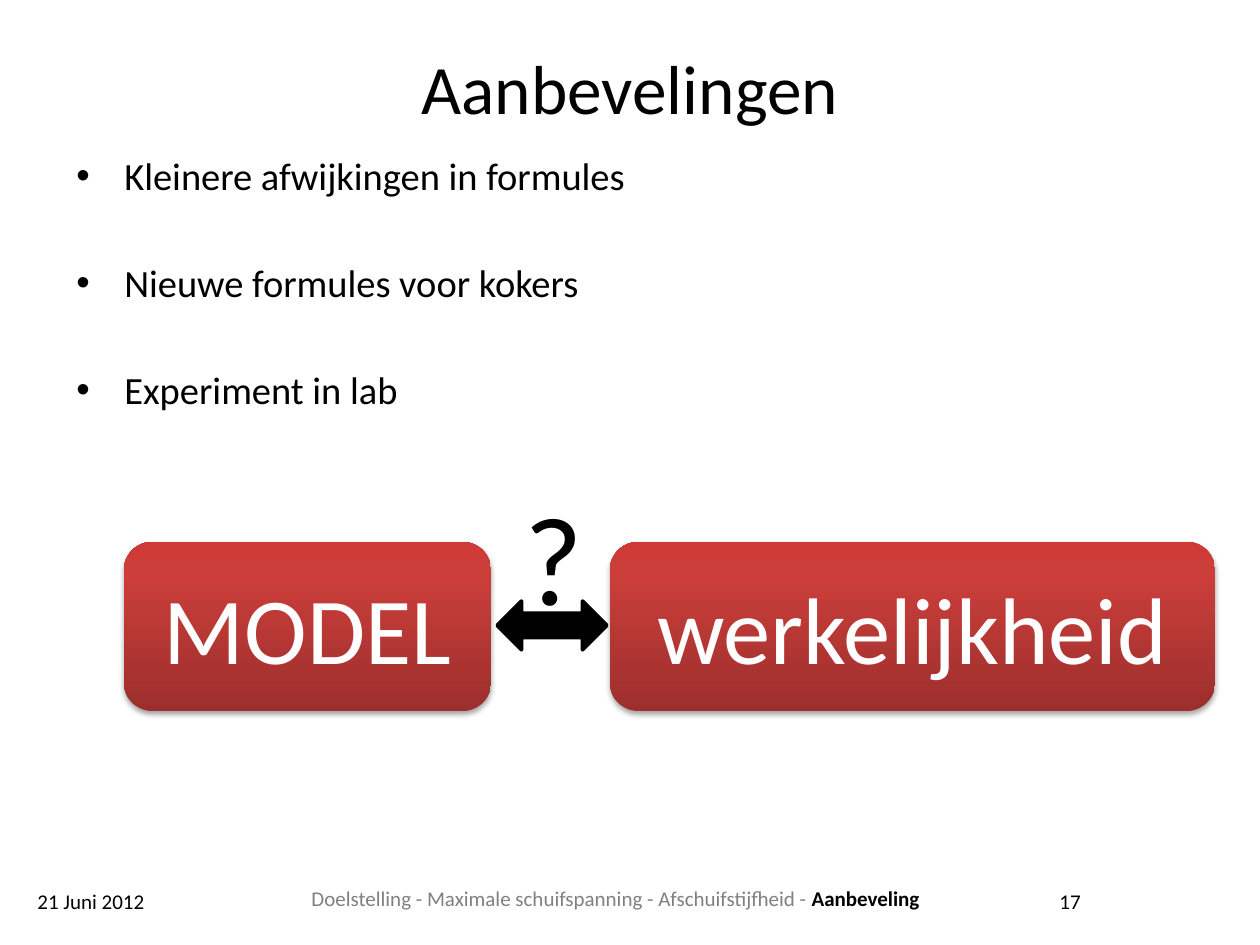
from copy import deepcopy

from lxml.etree import SubElement
from pptx import Presentation
from pptx.dml.color import RGBColor
from pptx.enum.shapes import MSO_SHAPE
from pptx.enum.text import MSO_ANCHOR, PP_ALIGN
from pptx.oxml.ns import qn
from pptx.util import Pt

PX = 914400 / 126
BLACK, GREY, WHITE = "000000", "808080", "FFFFFF"
REDS = [(0, "9C2F2D"), (0.8, "CB3E3A"), (1, "CE3B37")]


def px(n):
    return round(n * PX)


def color(code):
    return RGBColor.from_string(code)


def bullet(para, indent):
    props = para._p.get_or_add_pPr()
    props.set("marL", str(px(indent)))
    props.set("indent", str(-px(indent)))
    SubElement(props, qn("a:buFont"), typeface="Arial")
    SubElement(props, qn("a:buChar"), char="•")


def write(frame, paras, size=12, align=PP_ALIGN.LEFT, anchor=MSO_ANCHOR.TOP,
          wrap=True, gap=0, indent=0):
    """Fill a frame; each paragraph is a list of (text, colour, bold) runs."""
    frame.word_wrap = wrap
    frame.vertical_anchor = anchor
    for i, runs in enumerate(paras):
        para = frame.paragraphs[0] if i == 0 else frame.add_paragraph()
        para.alignment = align
        if indent:
            bullet(para, indent)
        if i:
            para.space_before = Pt(gap)
        for text, code, bold in runs:
            run = para.add_run()
            run.text = text
            font = run.font
            font.name, font.size, font.bold = "Calibri", Pt(size), bold
            font.color.rgb = color(code)


def label(slide, box, paras, **form):
    if isinstance(paras, str):
        paras = [[(paras, BLACK, False)]]
    shape = slide.shapes.add_textbox(*map(px, box))
    write(shape.text_frame, paras, **form)


def shade(shape):
    """Give a shape the red gradient, dark at the bottom."""
    fill = shape.fill
    fill.gradient()
    fill.gradient_angle = 90
    stops = shape._element.spPr.find(qn("a:gradFill")).find(qn("a:gsLst"))
    stops.append(deepcopy(stops[-1]))
    for stop, (place, code) in zip(fill.gradient_stops, REDS):
        stop.position = place
        stop.color.rgb = color(code)


def shadow(shape):
    """Add a soft shadow that falls straight down."""
    shape.shadow.inherit = False
    effects = shape._element.spPr.find(qn("a:effectLst"))
    outer = SubElement(effects, qn("a:outerShdw"), blurRad=str(Pt(3.1)),
                       dist=str(Pt(1.8)), dir="5400000", rotWithShape="0")
    tint = SubElement(outer, qn("a:srgbClr"), val=BLACK)
    SubElement(tint, qn("a:alpha"), val="35000")


def card(slide, box, text):
    shape = slide.shapes.add_shape(MSO_SHAPE.ROUNDED_RECTANGLE, *map(px, box))
    shade(shape)
    shape.line.fill.background()
    shadow(shape)
    write(shape.text_frame, [[(text, WHITE, False)]], size=54,
          align=PP_ALIGN.CENTER, anchor=MSO_ANCHOR.MIDDLE)


def arrow(slide, box):
    shape = slide.shapes.add_shape(MSO_SHAPE.LEFT_RIGHT_ARROW, *map(px, box))
    shape.shadow.inherit = False
    shape.fill.solid()
    shape.fill.fore_color.rgb = color(BLACK)
    shape.line.color.rgb = color(BLACK)
    shape.line.width = Pt(2)


def body(slide, box):
    items = ["Kleinere afwijkingen in formules", "Nieuwe formules voor kokers",
             "Experiment in lab"]
    label(slide, box, [[(item, BLACK, False)] for item in items],
          size=22, gap=34.6, indent=48)


def versus(slide, box):
    """Set two cards side by side with a questioned arrow between them."""
    left, top, width, height = box
    first, second = 367, 605
    card(slide, (left, top, first, height), "MODEL")
    card(slide, (left + width - second, top, second, height), "werkelijkheid")
    arrow(slide, (left + first + 6, top + 59, 110, 49))
    label(slide, (left + first + 21, top - 69, 90, 165), "?", size=72, wrap=False)


def footer(slide, box):
    left, top, width, height = box
    side, mid = 294, MSO_ANCHOR.MIDDLE
    label(slide, (left, top, side, height), "21 Juni 2012", anchor=mid)
    label(slide, (left + width - side, top, side, height), "17",
          align=PP_ALIGN.RIGHT, anchor=mid)
    trail = "Doelstelling - Maximale schuifspanning - Afschuifstijfheid - "
    label(slide, (left + 159, top + 3, 863, 38),
          [[(trail, GREY, False), ("Aanbeveling", BLACK, True)]],
          align=PP_ALIGN.CENTER)


def main():
    deck = Presentation()
    deck.slide_width, deck.slide_height = px(1260), px(945)
    slide = deck.slides.add_slide(deck.slide_layouts[6])
    label(slide, (63, 38, 1134, 97), "Aanbevelingen", size=39.6,
          align=PP_ALIGN.CENTER, anchor=MSO_ANCHOR.MIDDLE)
    body(slide, (64, 146, 1134, 713))
    versus(slide, (124, 542, 1091, 169))
    footer(slide, (25, 876, 1068, 50))
    deck.save("out.pptx")


if __name__ == "__main__":
    main()
